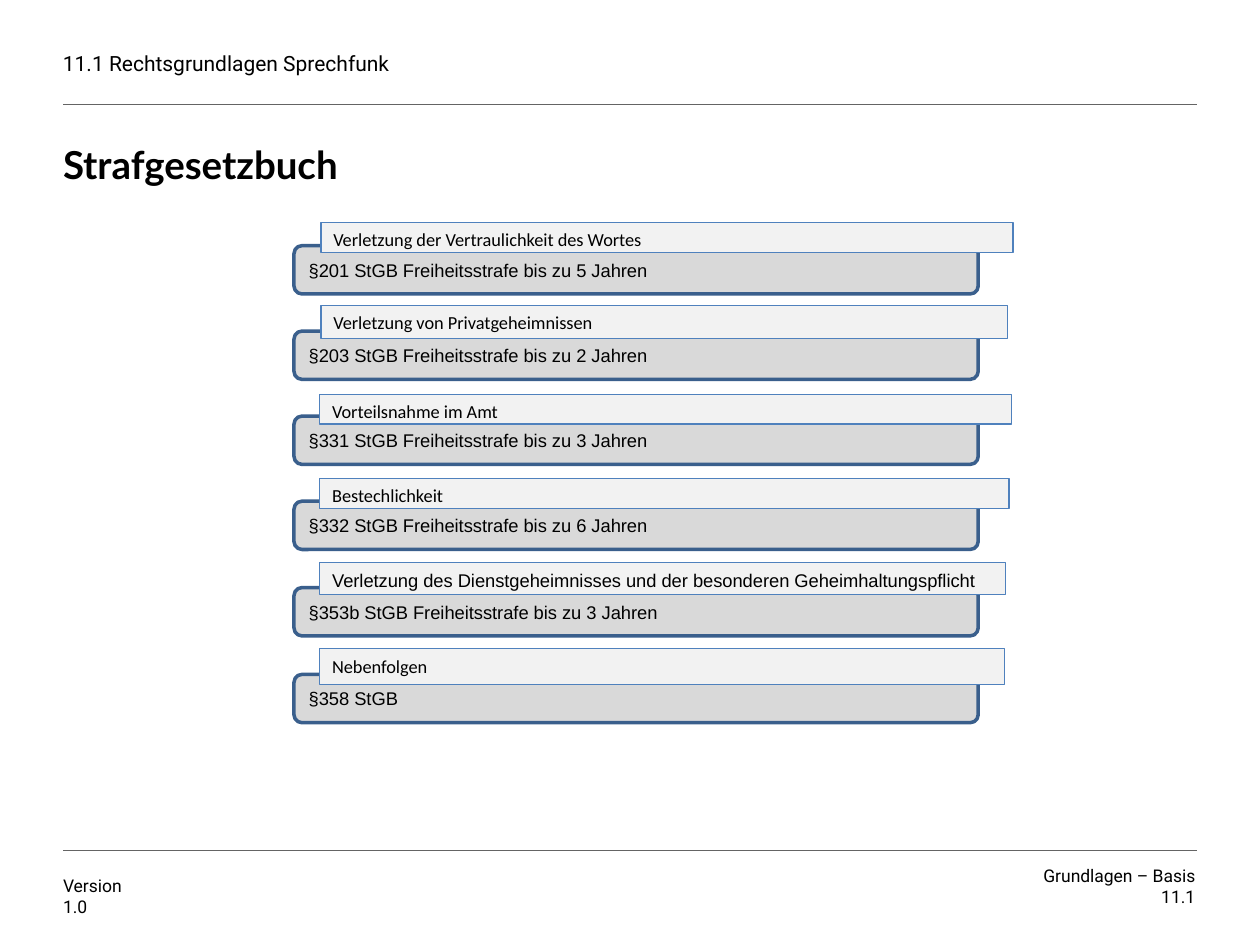
from lxml.etree import SubElement
from pptx import Presentation
from pptx.dml.color import RGBColor
from pptx.enum.shapes import MSO_CONNECTOR, MSO_SHAPE
from pptx.enum.text import MSO_ANCHOR, PP_ALIGN
from pptx.oxml.ns import qn
from pptx.util import Pt

COLORS = {
    "text": "000000",
    "rule": "646464",
    "card": "D9D9D9",
    "card_line": "3A5F8C",
    "label": "F2F2F2",
    "label_line": "4F81BD",
}
MARGIN, RIGHT_EDGE = 36, 684


def color(name):
    return RGBColor.from_string(COLORS[name])


def write(shape, lines, font, size, anchor, inset=None, align=PP_ALIGN.LEFT, bold=False):
    """Fill a shape with one paragraph per line; inset None keeps the default margins."""
    frame = shape.text_frame
    frame.word_wrap = True
    frame.vertical_anchor = anchor
    if inset is not None:
        frame.margin_left = frame.margin_right = Pt(inset)
        frame.margin_top = frame.margin_bottom = Pt(inset)
    for index, line in enumerate(lines):
        paragraph = frame.paragraphs[0] if index == 0 else frame.add_paragraph()
        paragraph.alignment = align
        run = paragraph.add_run()
        run.text = line
        run.font.name = font
        run.font.size = Pt(size)
        run.font.bold = bold
        run.font.color.rgb = color("text")


presentation = Presentation()
presentation.slide_width, presentation.slide_height = Pt(720), Pt(540)
slide = presentation.slides.add_slide(presentation.slide_layouts[6])
shapes = slide.shapes

# Header and footer rules
for y in (59.8, 486):
    rule = shapes.add_connector(
        MSO_CONNECTOR.STRAIGHT, Pt(MARGIN), Pt(y), Pt(RIGHT_EDGE), Pt(y)
    )
    rule.line.color.rgb = color("rule")
    rule.line.width = Pt(0.25)
    SubElement(rule._element.spPr, qn("a:effectLst"))

# Header, footer and title
header = shapes.add_textbox(Pt(MARGIN), Pt(24), Pt(438), Pt(24))
write(header, ["11.1 Rechtsgrundlagen Sprechfunk"], "Roboto", 12, MSO_ANCHOR.MIDDLE, 0)

version = shapes.add_textbox(Pt(MARGIN), Pt(496), Pt(40), Pt(32))
write(version, ["Version", "1.0"], "Roboto", 10, MSO_ANCHOR.MIDDLE, 0)

chapter = shapes.add_textbox(Pt(581), Pt(494), Pt(102), Pt(32))
write(chapter, ["Grundlagen – Basis 11.1"], "Roboto", 10, MSO_ANCHOR.TOP, 0, PP_ALIGN.RIGHT)

title = shapes.add_textbox(Pt(MARGIN), Pt(82.8), Pt(516), Pt(48))
write(title, ["Strafgesetzbuch"], "Lato", 22, MSO_ANCHOR.TOP, 0, bold=True)
title.text_frame.paragraphs[0].line_spacing = Pt(24)

# Offences: card top, penalty, label box (left, top, width, height), offence, label font
offences = [
    (140.4, "§201 StGB Freiheitsstrafe bis zu 5 Jahren",
     (183.4, 127, 395.5, 17.5), "Verletzung der Vertraulichkeit des Wortes", "Calibri"),
    (189.2, "§203 StGB Freiheitsstrafe bis zu 2 Jahren",
     (183.4, 174.5, 392.5, 19), "Verletzung von Privatgeheimnissen", "Calibri"),
    (237.8, "§331 StGB Freiheitsstrafe bis zu 3 Jahren",
     (182.7, 225.3, 395.5, 17), "Vorteilsnahme im Amt", "Calibri"),
    (286.4, "§332 StGB Freiheitsstrafe bis zu 6 Jahren",
     (182.7, 273.4, 394, 17.3), "Bestechlichkeit", "Calibri"),
    (335.8, "§353b StGB Freiheitsstrafe bis zu 3 Jahren",
     (182.7, 321.5, 392, 18.3),
     "Verletzung des Dienstgeheimnisses und der besonderen Geheimhaltungspflicht", "Arial"),
    (385.4, "§358 StGB",
     (182.7, 370.6, 391.2, 20.6), "Nebenfolgen", "Calibri"),
]
for card_top, penalty, label_box, offence, label_font in offences:
    parts = [
        (MSO_SHAPE.ROUNDED_RECTANGLE, (168, card_top, 391, 27.6), "card", 2,
         penalty, "Arial", MSO_ANCHOR.MIDDLE),
        (MSO_SHAPE.RECTANGLE, label_box, "label", 0.75,
         offence, label_font, MSO_ANCHOR.TOP),
    ]
    for kind, box, role, line_width, text, font, anchor in parts:
        shape = shapes.add_shape(kind, *(Pt(length) for length in box))
        shape.shadow.inherit = False
        shape.fill.solid()
        shape.fill.fore_color.rgb = color(role)
        shape.line.color.rgb = color(role + "_line")
        shape.line.width = Pt(line_width)
        write(shape, [text], font, 10.5, anchor)

presentation.save("out.pptx")
